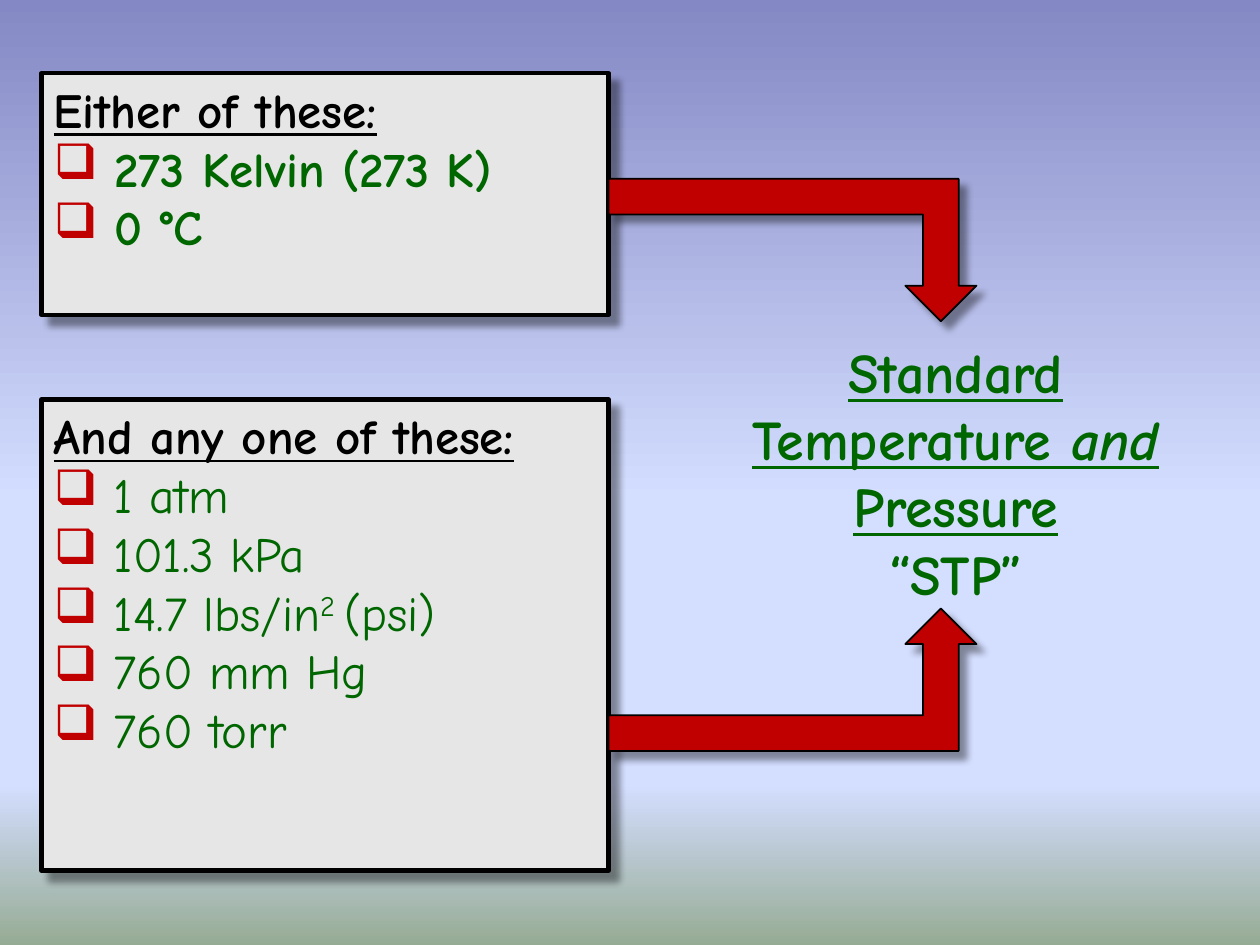
from dataclasses import dataclass

from lxml.etree import SubElement
from pptx import Presentation
from pptx.dml.color import RGBColor
from pptx.enum.shapes import MSO_SHAPE
from pptx.enum.text import MSO_ANCHOR, PP_ALIGN
from pptx.oxml import parse_xml
from pptx.oxml.ns import nsdecls, qn
from pptx.util import Inches, Pt


@dataclass(frozen=True)
class Theme:
    font: str = "Comic Neue"
    title_size: int = 32
    body_size: int = 28
    green: str = "006600"
    red: str = "C00000"
    black: str = "000000"
    panel: str = "E6E6E6"
    sky: tuple = ((0, "8488C4"), (53, "D4DEFF"), (83, "D4DEFF"), (100, "96AB94"))


THEME = Theme()


def set_background(s):
    stops = "".join(
        f'<a:gs pos="{pos * 1000}"><a:srgbClr val="{color}"/></a:gs>'
        for pos, color in THEME.sky
    )
    s.background.fill.solid()
    bg_pr = s._element.cSld.find(qn("p:bg")).find(qn("p:bgPr"))
    bg_pr.replace(bg_pr[0], parse_xml(
        f'<a:gradFill {nsdecls("a")} rotWithShape="1"><a:gsLst>{stops}</a:gsLst>'
        '<a:lin ang="5400000" scaled="0"/></a:gradFill>'
    ))


def add_shadow(sp, distance):
    sp.shadow.inherit = False
    effects = sp._element.spPr.find(qn("a:effectLst"))
    effects.append(parse_xml(
        f'<a:outerShdw {nsdecls("a")} blurRad="{Pt(4)}" dist="{Pt(distance)}" '
        'dir="2700000" algn="tl" rotWithShape="0">'
        f'<a:srgbClr val="{THEME.black}"><a:alpha val="40000"/></a:srgbClr></a:outerShdw>'
    ))


def add_block(s, kind, box, fill, line_width, shadow_distance):
    sp = s.shapes.add_shape(kind, *map(Inches, box))
    sp.fill.solid()
    sp.fill.fore_color.rgb = RGBColor.from_string(fill)
    sp.line.color.rgb = RGBColor.from_string(THEME.black)
    sp.line.width = Pt(line_width)
    add_shadow(sp, shadow_distance)
    return sp


def style(p, size, color, bold=False, underline=False):
    p.font.name = THEME.font
    p.font.size = Pt(size)
    p.font.color.rgb = RGBColor.from_string(color)
    p.font.bold = bold
    p.font.underline = underline


def add_run(p, text):
    r = p.add_run()
    r.text = text
    return r


def add_bullet(p):
    p_pr = p._p.get_or_add_pPr()
    p_pr.set("marL", "0")
    p_pr.set("indent", "0")
    color = SubElement(p_pr, qn("a:buClr"))
    SubElement(color, qn("a:srgbClr")).set("val", THEME.red)
    SubElement(p_pr, qn("a:buChar")).set("char", "❑")


def add_panel(s, box, heading, items, bold_items):
    sp = add_block(s, MSO_SHAPE.RECTANGLE, box, THEME.panel, 2.5, 7)
    tf = sp.text_frame
    tf.word_wrap = True
    tf.vertical_anchor = MSO_ANCHOR.TOP
    p = tf.paragraphs[0]
    p.alignment = PP_ALIGN.LEFT
    add_run(p, heading)
    style(p, THEME.body_size, THEME.black, bold=True, underline=True)
    for item in items:
        p = tf.add_paragraph()
        p.alignment = PP_ALIGN.LEFT
        style(p, THEME.body_size, THEME.green, bold=bold_items)
        add_bullet(p)
        base, *raised = item.split("^")
        add_run(p, " " + base)
        if raised:
            exponent, rest = raised
            add_run(p, exponent).font._element.set("baseline", "30000")
            add_run(p, rest)


def add_title(s, box):
    tf = s.shapes.add_textbox(*map(Inches, box)).text_frame
    tf.word_wrap = True
    tf.vertical_anchor = MSO_ANCHOR.MIDDLE
    p = tf.paragraphs[0]
    p.alignment = PP_ALIGN.CENTER
    style(p, THEME.title_size, THEME.green, bold=True, underline=True)
    add_run(p, "Standard Temperature ")
    add_run(p, "and").font.italic = True
    add_run(p, " Pressure")
    p.add_line_break()
    add_run(p, "“STP”").font.underline = False


def add_arrow(s, top, pointing_down=False):
    box = (4.83, top, 2.92, 1.13)
    sp = add_block(s, MSO_SHAPE.BENT_UP_ARROW, box, THEME.red, 1, 6)
    if pointing_down:
        sp._element.spPr.find(qn("a:xfrm")).set("flipV", "1")


def main():
    prs = Presentation()
    prs.slide_width, prs.slide_height = Inches(10), Inches(7.5)
    s = prs.slides.add_slide(prs.slide_layouts[6])
    set_background(s)
    add_title(s, (5.42, 2.33, 4.33, 2.83))
    add_panel(s, (0.33, 0.58, 4.5, 1.92), "Either of these:",
              ["273 Kelvin (273 K)", "0 °C"], bold_items=True)
    add_panel(s, (0.33, 3.17, 4.5, 3.74), "And any one of these:",
              ["1 atm", "101.3 kPa", "14.7 lbs/in^2 ^(psi)", "760 mm Hg", "760 torr"],
              bold_items=False)
    add_arrow(s, 4.83)
    add_arrow(s, 1.42, pointing_down=True)
    prs.save("out.pptx")


if __name__ == "__main__":
    main()
